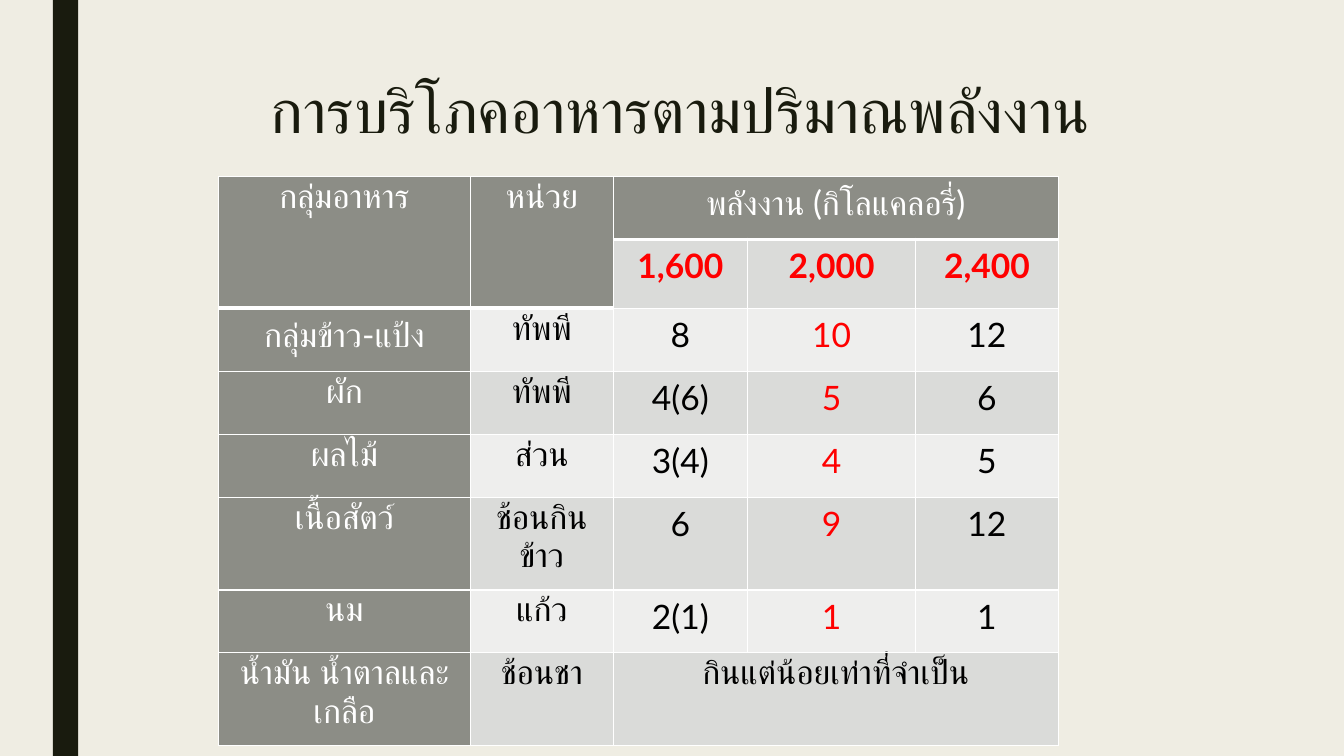
from dataclasses import dataclass

from lxml.etree import SubElement
from pptx import Presentation
from pptx.dml.color import RGBColor
from pptx.enum.shapes import MSO_SHAPE
from pptx.enum.text import MSO_ANCHOR, PP_ALIGN
from pptx.oxml.ns import qn
from pptx.table import Table, _Cell
from pptx.text.text import TextFrame
from pptx.util import Emu, Inches, Pt

CREAM = RGBColor(0xEF, 0xED, 0xE3)
INK = RGBColor(0x19, 0x1B, 0x0E)
GREY = RGBColor(0x8C, 0x8D, 0x86)
DARK_BAND = RGBColor(0xDA, 0xDB, 0xD9)
LIGHT_BAND = RGBColor(0xEE, 0xEE, 0xED)
WHITE = RGBColor(0xFF, 0xFF, 0xFF)
BLACK = RGBColor(0, 0, 0)
RED = RGBColor(0xFF, 0, 0)

# The slide is a grid of 16 columns and 9 rows of square units
SLIDE_WIDTH, SLIDE_HEIGHT = Inches(13.333), Inches(7.5)
UNIT = SLIDE_HEIGHT / 9
COLUMN_UNITS = (3, 1.7, 1.6, 2, 1.7)
ROW_UNITS = (0.75, 0.82) + (0.75,) * 6
HEADER_ROWS = 2


@dataclass(frozen=True)
class FoodGroup:
    name: str
    measure: str
    amounts: tuple[str, ...]


FOOD_GROUPS = (
    FoodGroup("กลุ่มข้าว-แป้ง", "ทัพพี", ("8", "10", "12")),
    FoodGroup("ผัก", "ทัพพี", ("4(6)", "5", "6")),
    FoodGroup("ผลไม้", "ส่วน", ("3(4)", "4", "5")),
    FoodGroup("เนื้อสัตว์", "ช้อนกินข้าว", ("6", "9", "12")),
    FoodGroup("นม", "แก้ว", ("2(1)", "1", "1")),
    FoodGroup("น้ำมัน น้ำตาลและเกลือ", "ช้อนชา", ("กินแต่น้อยเท่าที่จำเป็น",)),
)
ENERGY_LEVELS = ("1,600", "2,000", "2,400")


def units(count: float) -> Emu:
    return Emu(round(count * UNIT))


def write_text(frame: TextFrame, text: str, *, font: str, size: float,
               color: RGBColor, bold: bool = False, line_spacing: float = 1.0,
               space: float = 0) -> None:
    paragraph = frame.paragraphs[0]
    paragraph.alignment = PP_ALIGN.CENTER
    paragraph.line_spacing = line_spacing
    paragraph.space_before = paragraph.space_after = Pt(space)
    run = paragraph.add_run()
    run.text = text
    run.font.name, run.font.size, run.font.bold = font, Pt(size), bold
    run.font.color.rgb = color


def set_borders(cell: _Cell, bottom: float = 1) -> None:
    properties = cell._tc.get_or_add_tcPr()
    widths = {"a:lnL": 1, "a:lnR": 1, "a:lnT": 1, "a:lnB": bottom}
    for index, (tag, width) in enumerate(widths.items()):
        line = SubElement(properties, qn(tag), w=str(Pt(width)))
        fill = SubElement(line, qn("a:solidFill"))
        SubElement(fill, qn("a:srgbClr"), val=str(WHITE))
        properties.insert(index, line)


def fill_cell(cell: _Cell, text: str, fill: RGBColor, color: RGBColor,
              bold: bool = False) -> None:
    cell.fill.solid()
    cell.fill.fore_color.rgb = fill
    cell.margin_left = cell.margin_right = Inches(0.07)
    cell.margin_top = cell.margin_bottom = 0
    write_text(cell.text_frame, text, font="Lato", size=24, color=color,
               bold=bold, line_spacing=1.15, space=9)


def fill_header(table: Table) -> None:
    headings = ("กลุ่มอาหาร", "หน่วย", "พลังงาน (กิโลแคลอรี่)")
    for column, heading in enumerate(headings):
        fill_cell(table.cell(0, column), heading, GREY, WHITE)
    for column, level in enumerate(ENERGY_LEVELS, start=2):
        fill_cell(table.cell(1, column), level, DARK_BAND, RED, bold=True)
    for column in range(2):
        table.cell(0, column).merge(table.cell(1, column))
    table.cell(0, 2).merge(table.cell(0, 4))


def fill_food_groups(table: Table) -> None:
    for row, group in enumerate(FOOD_GROUPS, start=HEADER_ROWS):
        band = DARK_BAND if row % 2 else LIGHT_BAND
        if len(group.amounts) == 1:
            band = DARK_BAND
            table.cell(row, 2).merge(table.cell(row, 4))
        fill_cell(table.cell(row, 0), group.name, GREY, WHITE)
        fill_cell(table.cell(row, 1), group.measure, band, BLACK)
        for column, amount in enumerate(group.amounts, start=2):
            color = RED if column == 3 else BLACK
            fill_cell(table.cell(row, column), amount, band, color)


def main() -> None:
    presentation = Presentation()
    presentation.slide_width, presentation.slide_height = SLIDE_WIDTH, SLIDE_HEIGHT
    slide = presentation.slides.add_slide(presentation.slide_layouts[6])

    # Background and side bar
    slide.background.fill.solid()
    slide.background.fill.fore_color.rgb = CREAM
    bar = slide.shapes.add_shape(MSO_SHAPE.RECTANGLE, units(0.63), 0,
                                 units(0.3), SLIDE_HEIGHT)
    bar.shadow.inherit = False
    bar.fill.solid()
    bar.fill.fore_color.rgb = INK
    bar.line.fill.background()

    # Title
    title = slide.shapes.add_textbox(units(1.8), units(0.9), units(12.6), units(1.95))
    title.text_frame.word_wrap = True
    title.text_frame.vertical_anchor = MSO_ANCHOR.TOP
    write_text(title.text_frame, "การบริโภคอาหารตามปริมาณพลังงาน", font="Cabin",
               size=44, color=INK, line_spacing=0.89)

    # Table of daily amounts
    table = slide.shapes.add_table(
        len(ROW_UNITS), len(COLUMN_UNITS), units(2.6), units(2.1),
        units(sum(COLUMN_UNITS)), units(sum(ROW_UNITS))).table
    for column, width in zip(table.columns, COLUMN_UNITS):
        column.width = units(width)
    for row, height in zip(table.rows, ROW_UNITS):
        row.height = units(height)
    fill_header(table)
    fill_food_groups(table)
    for index, cell in enumerate(table.iter_cells()):
        set_borders(cell, bottom=3 if index < 3 else 1)

    presentation.save("out.pptx")


if __name__ == "__main__":
    main()
